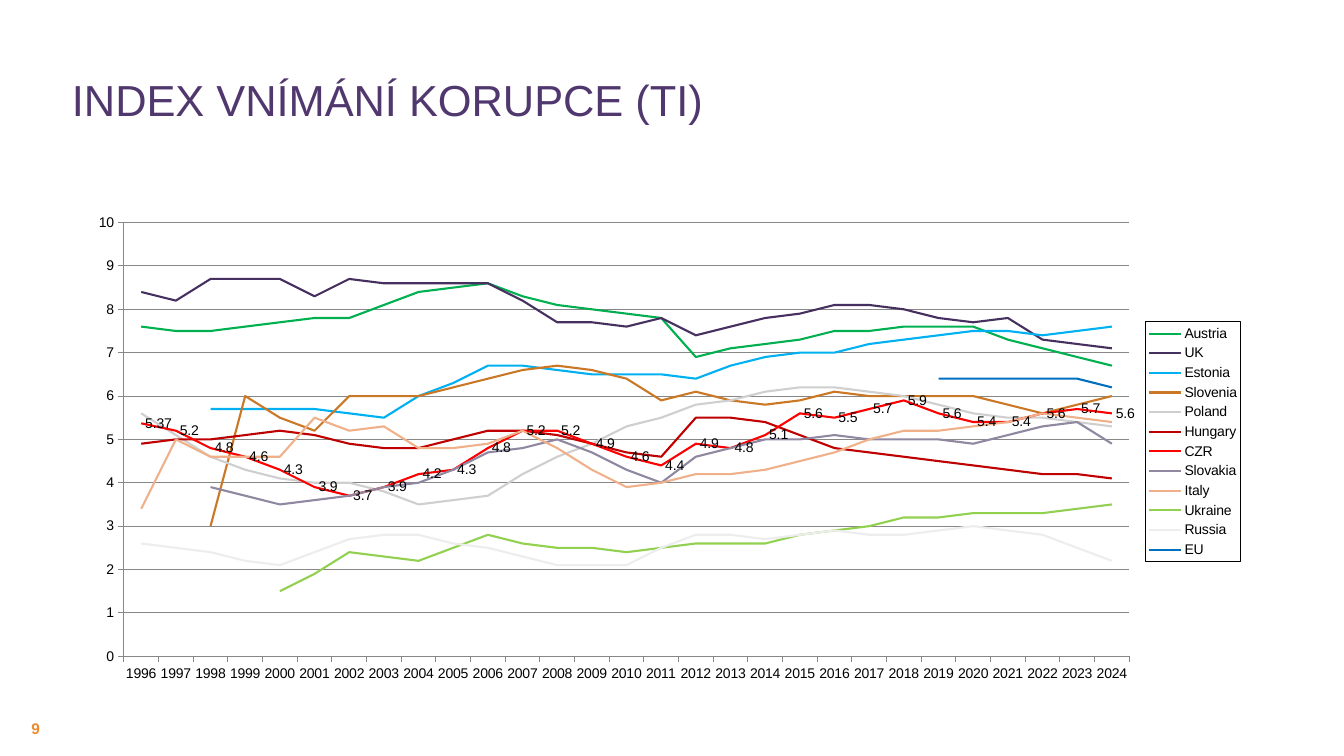
from lxml import etree
from pptx import Presentation
from pptx import util as u
from pptx.chart import data as chart_data
from pptx.dml.color import RGBColor
from pptx.enum import chart as chart_enum, text
from pptx.oxml import ns

EMU_PER_PX = 914400 / 100.8
FONT = "Arial"
AXIS_COLOR = "878787"
YEARS = range(1996, 2025)

# Name, line colour, values of every second year up to 2024, years off that line
COUNTRIES = [
    ("Austria", "00B050", [7.6, 7.5, 7.7, 7.8, 8.4, 8.6, 8.1, 7.9, 6.9, 7.2, 7.5,
                           7.6, 7.6, 7.1, 6.7], {2011: 7.8}),
    ("UK", "45305F", [8.4, 8.7, 8.7, 8.7, 8.6, 8.6, 7.7, 7.6, 7.4, 7.8, 8.1,
                      8, 7.7, 7.3, 7.1], {1997: 8.2, 2001: 8.3, 2011: 7.8, 2021: 7.8}),
    ("Estonia", "00B0F0", [5.7, 5.7, 5.6, 6, 6.7, 6.6, 6.5, 6.4, 6.9, 7,
                           7.3, 7.5, 7.4, 7.6], {2003: 5.5}),
    ("Slovenia", "CB7826", [3, 5.5, 6, 6, 6.4, 6.7, 6.4, 6.1, 5.8, 6.1,
                            6, 6, 5.6, 6], {1999: 6, 2001: 5.2, 2011: 5.9}),
    ("Poland", "CFCFCF", [5.6, 4.6, 4.1, 4, 3.5, 3.7, 4.6, 5.3, 5.8, 6.1, 6.2,
                          6, 5.6, 5.5, 5.3], {}),
    ("Hungary", "C00000", [4.9, 5, 5.2, 4.9, 4.8, 5.2, 5.1, 4.7, 5.5, 5.4, 4.8,
                           4.6, 4.4, 4.2, 4.1], {2011: 4.6}),
    ("CZR", "FF0000", [5.37, 4.8, 4.3, 3.7, 4.2, 4.8, 5.2, 4.6, 4.9, 5.1, 5.5,
                       5.9, 5.4, 5.6, 5.6],
     dict(zip(YEARS[1::2], [5.2, 4.6, 3.9, 3.9, 4.3, 5.2, 4.9, 4.4, 4.8, 5.6, 5.7,
                            5.6, 5.4, 5.7]))),
    ("Slovakia", "8F88A0", [3.9, 3.5, 3.7, 4, 4.7, 5, 4.3, 4.6, 5, 5.1,
                            5, 4.9, 5.3, 4.9], {2011: 4, 2023: 5.4}),
    ("Italy", "EFB08A", [3.4, 4.6, 4.6, 5.2, 4.8, 4.9, 4.8, 3.9, 4.2, 4.3, 4.7,
                         5.2, 5.3, 5.6, 5.4], {1997: 5, 2001: 5.5, 2003: 5.3, 2007: 5.2}),
    ("Ukraine", "92D050", [1.5, 2.4, 2.2, 2.8, 2.5, 2.4, 2.6, 2.6, 2.9,
                           3.2, 3.3, 3.3, 3.5], {}),
    ("Russia", "EDEDED", [2.6, 2.4, 2.1, 2.7, 2.8, 2.5, 2.1, 2.1, 2.8, 2.7, 2.9,
                          2.8, 3, 2.8, 2.2], {}),
    ("EU", "0070C0", [6.4, 6.4, 6.2], {2019: 6.4, 2023: 6.4}),
]


def yearly_values(even_values, exceptions):
    """Fill odd years with the mean of their neighbours unless given."""
    even_years = YEARS[::2][-len(even_values):]
    known = {**dict(zip(even_years, even_values)), **exceptions}
    for year in even_years[:-1]:
        mean = (known[year] + known[year + 2]) / 2
        known.setdefault(year + 1, round(mean, 1))
    return [known.get(year) for year in YEARS]


def px(length):
    return u.Emu(round(length * EMU_PER_PX))


def color(value):
    return RGBColor.from_string(value)


def apply(target, **values):
    for name, value in values.items():
        setattr(target, name, value)


def set_font(font, size, hex_color, bold=False):
    apply(font, name=FONT, size=u.Pt(size), bold=bold)
    font.color.rgb = color(hex_color)


def set_line(line, hex_color, width=0.75):
    line.color.rgb = color(hex_color)
    line.width = u.Pt(width)


def add_text(slide, box, words, size, hex_color, bold=False, frame_format=None,
             paragraph_format=None):
    frame = slide.shapes.add_textbox(*map(px, box)).text_frame
    apply(frame, word_wrap=True, margin_left=0, margin_right=0, margin_top=0,
          margin_bottom=0, **(frame_format or {}))
    paragraph = frame.paragraphs[0]
    apply(paragraph, **(paragraph_format or {}))
    run = paragraph.add_run()
    run.text = words
    set_font(run.font, size, hex_color, bold)


def set_layout(parent, index, box, inner=False):
    """Place a chart part by fractions of the chart area."""
    for old in parent.findall(ns.qn("c:layout")):
        parent.remove(old)
    layout = etree.Element(ns.qn("c:layout"))
    manual = etree.SubElement(layout, ns.qn("c:manualLayout"))
    settings = [("layoutTarget", "inner")] if inner else []
    settings += [("xMode", "edge"), ("yMode", "edge"), *zip("xywh", box)]
    for tag, value in settings:
        etree.SubElement(manual, ns.qn(f"c:{tag}")).set("val", str(value))
    parent.insert(index, layout)


def style_legend(chart):
    chart.has_legend = True
    legend = chart.legend
    apply(legend, position=chart_enum.XL_LEGEND_POSITION.RIGHT, include_in_layout=False)
    element = legend._element
    set_layout(element, 1, (0.91, 0.25, 0.08, 0.5))
    border = etree.Element(ns.qn("c:spPr"))
    line = etree.SubElement(border, ns.qn("a:ln"), w=str(u.Pt(0.75)))
    fill = etree.SubElement(line, ns.qn("a:solidFill"))
    etree.SubElement(fill, ns.qn("a:srgbClr"), val="000000")
    element.find(ns.qn("c:overlay")).addnext(border)


def add_line_chart(slide, box):
    data = chart_data.CategoryChartData()
    data.categories = [str(year) for year in YEARS]
    for name, _, even_values, exceptions in COUNTRIES:
        data.add_series(name, yearly_values(even_values, exceptions))
    chart = slide.shapes.add_chart(
        chart_enum.XL_CHART_TYPE.LINE, *map(px, box), data).chart
    chart.has_title = False
    set_font(chart.font, 10, "000000")

    # Axes and plot area
    for axis in (chart.category_axis, chart.value_axis):
        axis.major_tick_mark = chart_enum.XL_TICK_MARK.OUTSIDE
        set_line(axis.format.line, AXIS_COLOR)
    apply(chart.value_axis, minimum_scale=0, maximum_scale=10, major_unit=1,
          has_major_gridlines=True)
    set_line(chart.value_axis.major_gridlines.format.line, AXIS_COLOR)
    plot = chart.plots[0]
    plot.vary_by_categories = False
    plot_area = chart._chartSpace.chart.plotArea
    set_layout(plot_area, 0, (0.044, 0.043, 0.852, 0.904), inner=True)

    # Country lines, with values on the Czech one
    for series, (name, hex_color, _, _) in zip(plot.series, COUNTRIES):
        series.smooth = False
        set_line(series.format.line, hex_color, 1.5)
        if name == "CZR":
            labels = series.data_labels
            apply(labels, show_value=True,
                  position=chart_enum.XL_LABEL_POSITION.RIGHT)
            set_font(labels.font, 10, "000000")
    style_legend(chart)


def main():
    presentation = Presentation()
    apply(presentation, slide_width=px(1344), slide_height=px(756))
    slide = presentation.slides.add_slide(presentation.slide_layouts[6])

    # Title
    add_text(slide, (72, 79, 1180, 96), "INDEX VNÍMÁNÍ KORUPCE (TI)", 31, "50386F",
             paragraph_format={"line_spacing": 0.9})
    # Corruption index by country
    add_line_chart(slide, (72, 202, 1180, 480))
    # Slide number
    add_text(slide, (10, 708, 30, 40), "9", 11, "EA8B2D", bold=True,
             frame_format={"vertical_anchor": text.MSO_ANCHOR.MIDDLE},
             paragraph_format={"alignment": text.PP_ALIGN.RIGHT})
    presentation.save("out.pptx")


if __name__ == "__main__":
    main()
